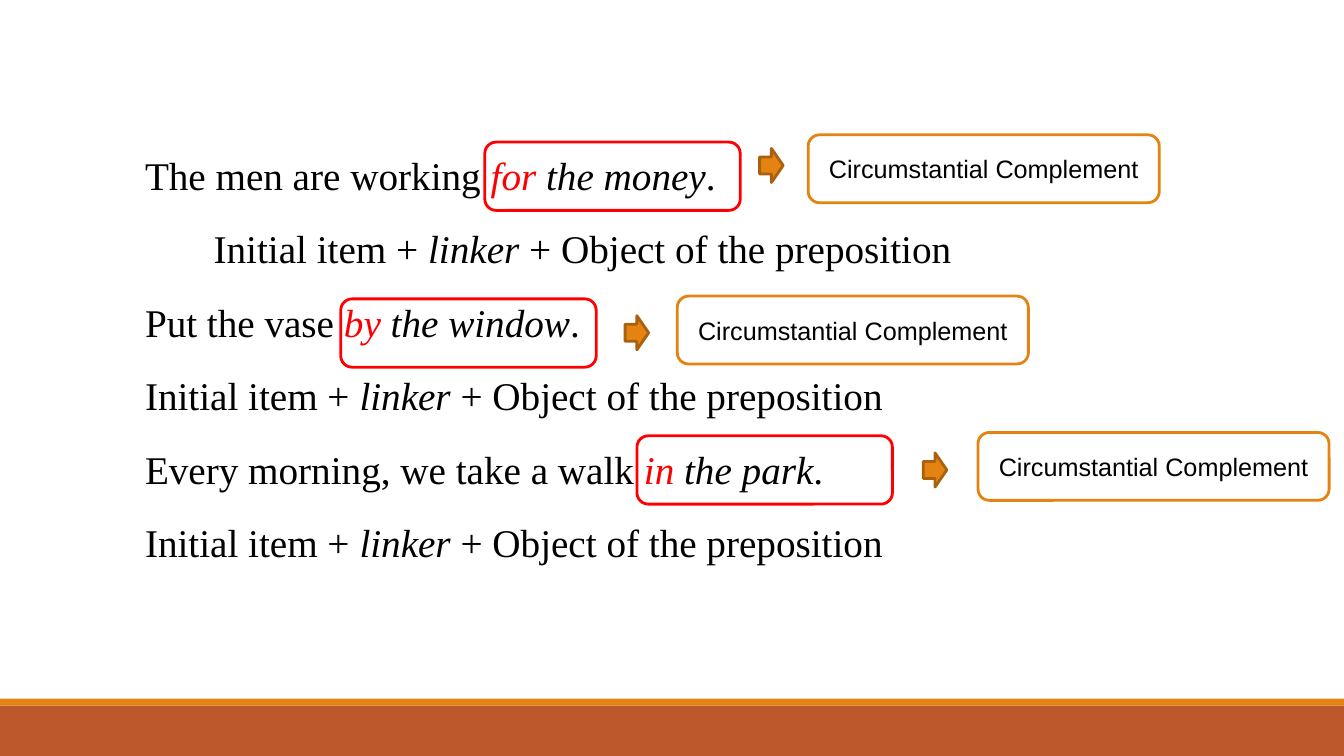
from pptx import Presentation
from pptx.dml.color import RGBColor
from pptx.enum.shapes import MSO_SHAPE
from pptx.enum.text import MSO_ANCHOR, PP_ALIGN
from pptx.util import Pt

BLACK, RED, WHITE = "000000", "FF0000", "FFFFFF"
ORANGE, DARK_ORANGE, RUST = "E48312", "A9610D", "BD582C"

# Each example: opening, linker, object, first-line indent of its pattern
EXAMPLES = [
    ("The men are working ", "for", " the money", 49),
    ("Put the vase ", "by", " the window", 0),
    ("Every morning, we take a walk ", "in", " the park", 0),
]
PATTERN = [
    ("Initial item + ", BLACK, False),
    ("linker", BLACK, True),
    (" + Object of the preposition", BLACK, False),
]
LABEL = "Circumstantial Complement"

FOOTER_BARS = [
    (0, 504, 960, 36, RUST),
    (0, 499, 960, 5, ORANGE),
]
SENTENCES_BOX = (96.5, 47.5, 807.8, 398.2)
# Left and top of each frame, arrow and label, one row per example
MARKER_ROWS = [
    ((346.3, 101.5), (542.6, 106), (577.3, 96.3)),
    ((243.4, 213.5), (446.5, 225.5), (483.8, 211.5)),
    ((455, 311.3), (659.5, 323.5), (698.6, 308.9)),
]
FRAME_SIZE = (182.5, 48.8)
ARROW_SIZE = (16.8, 24.4)
LABEL_SIZE = (250.8, 48.5)


def color(hex_string):
    return RGBColor.from_string(hex_string)


def add_block(slide, kind, box, fill=None, line=None):
    shape = slide.shapes.add_shape(kind, *map(Pt, box))
    shape.shadow.inherit = False
    if fill:
        shape.fill.solid()
        shape.fill.fore_color.rgb = color(fill)
    else:
        shape.fill.background()
    if line:
        shape.line.color.rgb = color(line)
        shape.line.width = Pt(2)
    else:
        shape.line.fill.background()
    return shape


def add_run(paragraph, text, font_name, size, hex_string, italic=False):
    run = paragraph.add_run()
    run.text = text
    font_format = {"name": font_name, "size": Pt(size), "italic": italic}
    for attribute, value in font_format.items():
        setattr(run.font, attribute, value)
    run.font.color.rgb = color(hex_string)


def add_sentences(slide):
    frame = slide.shapes.add_textbox(*map(Pt, SENTENCES_BOX)).text_frame
    frame_format = {
        "word_wrap": True,
        "vertical_anchor": MSO_ANCHOR.MIDDLE,
        "margin_left": Pt(7.2),
        "margin_right": Pt(7.2),
        "margin_top": Pt(7.2),
        "margin_bottom": Pt(7.2),
    }
    for attribute, value in frame_format.items():
        setattr(frame, attribute, value)

    lines = []
    for opening, linker, complement, indent in EXAMPLES:
        sentence = [
            (opening, BLACK, False),
            (linker, RED, True),
            (complement, BLACK, True),
            (".", BLACK, False),
        ]
        lines += [(sentence, 0), (PATTERN, indent)]

    for index, (runs, indent) in enumerate(lines):
        paragraph = frame.add_paragraph() if index else frame.paragraphs[0]
        paragraph.line_spacing = 1.56
        if indent:
            paragraph_properties = paragraph._p.get_or_add_pPr()
            paragraph_properties.set("marL", "0")
            paragraph_properties.set("indent", str(Pt(indent)))
        for text, hex_string, italic in runs:
            add_run(paragraph, text, "Times New Roman", 28, hex_string, italic)


def add_label(slide, position):
    box = position + LABEL_SIZE
    shape = add_block(slide, MSO_SHAPE.ROUNDED_RECTANGLE, box, WHITE, ORANGE)
    frame = shape.text_frame
    frame.word_wrap = True
    frame.vertical_anchor = MSO_ANCHOR.MIDDLE
    paragraph = frame.paragraphs[0]
    paragraph.alignment = PP_ALIGN.CENTER
    add_run(paragraph, LABEL, "Arial", 18, BLACK)


def main():
    presentation = Presentation()
    presentation.slide_width, presentation.slide_height = Pt(960), Pt(540)
    slide = presentation.slides.add_slide(presentation.slide_layouts[6])

    for *box, fill in FOOTER_BARS:
        add_block(slide, MSO_SHAPE.RECTANGLE, box, fill)
    add_sentences(slide)
    for frame, arrow, label in MARKER_ROWS:
        add_block(slide, MSO_SHAPE.ROUNDED_RECTANGLE, frame + FRAME_SIZE, line=RED)
        add_block(slide, MSO_SHAPE.RIGHT_ARROW, arrow + ARROW_SIZE, ORANGE, DARK_ORANGE)
        add_label(slide, label)

    presentation.save("out.pptx")


if __name__ == "__main__":
    main()
